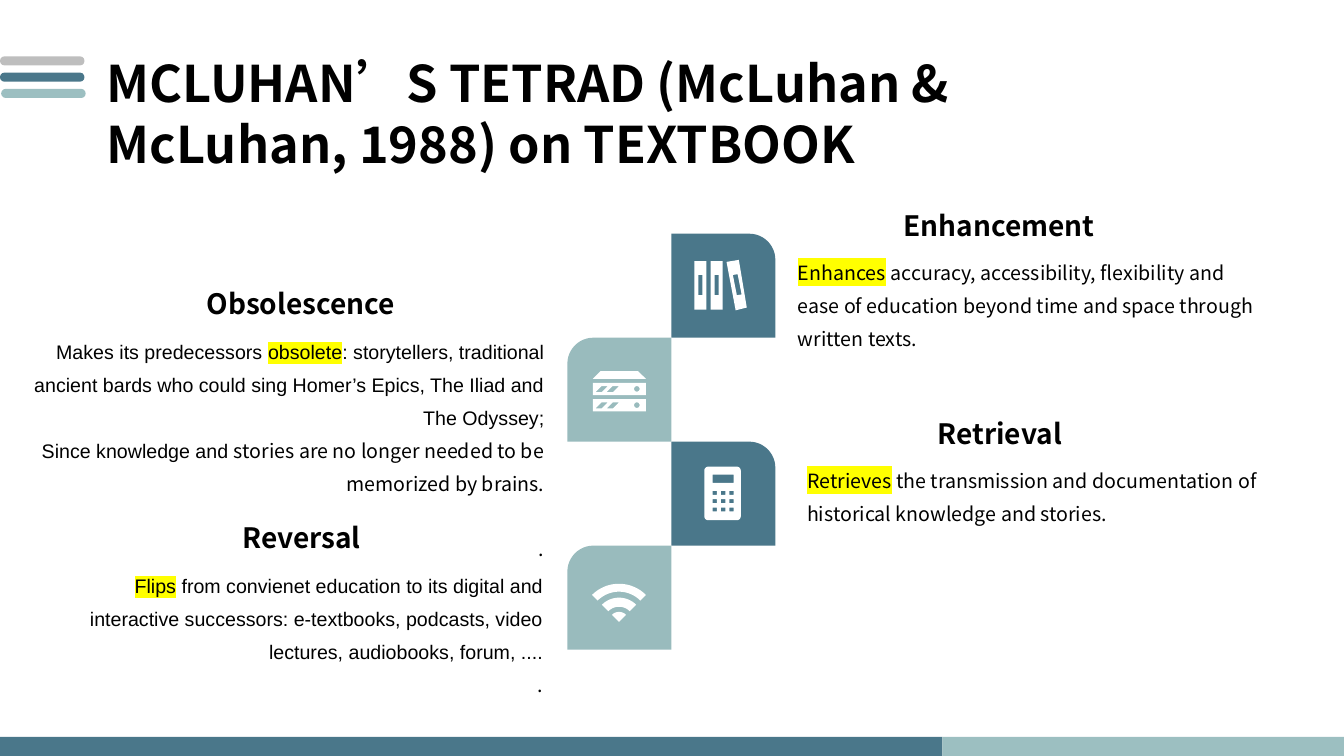
"""Build the slide on McLuhan's tetrad applied to the textbook."""
from math import cos, pi, sin

from lxml.etree import SubElement
from pptx import Presentation
from pptx.dml.color import RGBColor
from pptx.enum.shapes import MSO_SHAPE as Preset
from pptx.enum.text import MSO_ANCHOR as Anchor, MSO_AUTO_SIZE as AutoSize, PP_ALIGN as Align
from pptx.oxml.ns import qn
from pptx.util import Cm, Pt

BLACK = RGBColor(0x00, 0x00, 0x00)
WHITE = RGBColor(0xFF, 0xFF, 0xFF)
TEAL = RGBColor(0x4A, 0x77, 0x8A)
MINT = RGBColor(0x9C, 0xBF, 0xC1)
SAGE = RGBColor(0x99, 0xBB, 0xBD)
GREY = RGBColor(0xBE, 0xBE, 0xBE)
HIGHLIGHT = "FFFF00"
NOTO = "Noto Sans CJK SC"
ARIAL = "Arial"

TILE = 2.62
TILE_LEFT, TILE_TOP = 14.3, 5.89
BLANK_LINE = Pt(23.5)

HEADINGS = [
    ("Obsolescence", 4.85, 7.09, 5.46),
    ("Reversal", 5.72, 12.98, 3.76),
    ("Enhancement", 22.45, 5.13, 5.46),
    ("Retrieval", 23.32, 10.36, 3.76),
]

BODIES = [
    ((19.86, 6.22, 12.22, 3.61), Align.LEFT, [
        [("Enhances", NOTO, True),
         (" accuracy, accessibility, flexibility and ease of education beyond time"
          " and space through written texts.", NOTO, False)],
    ]),
    ((20.09, 11.46, 12.22, 1.93), Align.LEFT, [
        [("Retrieves", NOTO, True),
         (" the transmission and documentation of historical knowledge and stories.",
          NOTO, False)],
    ]),
    ((0, 8.2, 13.97, 6.12), Align.RIGHT, [
        [("Makes its predecessors ", ARIAL, False),
         ("obsolete", ARIAL, True),
         (": storytellers, traditional ancient bards who could sing Homer’s Epics,"
          " The Iliad and The Odyssey;", ARIAL, False)],
        [("Since knowledge and ", ARIAL, False),
         ("stories are no longer needed to be memorized by brains.", NOTO, False)],
        [(".", NOTO, False)],
    ]),
    ((1.19, 14.1, 12.75, 3.61), Align.RIGHT, [
        [("Flips", ARIAL, True),
         (" from convienet education to its digital and interactive successors:"
          " e-textbooks, podcasts, video lectures, audiobooks, forum, ....", ARIAL, False)],
        [(".", NOTO, False)],
    ]),
]


def add_block(slide, preset, box, color):
    """Add a plain filled preset shape."""
    shape = slide.shapes.add_shape(preset, *map(Cm, box))
    shape.shadow.inherit = False
    shape.fill.solid()
    shape.fill.fore_color.rgb = color
    shape.line.fill.background()
    return shape


def add_run(paragraph, text, font_name, size, bold=False, highlighted=False):
    """Add one formatted run to a paragraph."""
    run = paragraph.add_run()
    run.text = text
    run.font.size = Pt(size)
    run.font.bold = bold
    run.font.color.rgb = BLACK
    if highlighted:
        highlight = SubElement(run.font.fill._xPr, qn("a:highlight"))
        SubElement(highlight, qn("a:srgbClr"), val=HIGHLIGHT)
    run.font.name = font_name


def add_text_box(slide, box):
    """Add an empty wrapping text box and return its text frame."""
    frame = slide.shapes.add_textbox(*map(Cm, box)).text_frame
    frame.word_wrap = True
    return frame


def add_heading(slide, text, left, top, width):
    """Add a bold centred heading."""
    paragraph = add_text_box(slide, (left, top, width, 1.12)).paragraphs[0]
    paragraph.alignment = Align.CENTER
    add_run(paragraph, text, NOTO, 20, bold=True)


def add_body(slide, box, alignment, paragraphs):
    """Add a body text box from lists of runs."""
    frame = add_text_box(slide, box)
    for index, runs in enumerate(paragraphs):
        paragraph = frame.add_paragraph() if index else frame.paragraphs[0]
        paragraph.alignment = alignment
        paragraph.line_spacing = 1.4
        if index == 2:
            paragraph.space_before = BLANK_LINE
        for text, font_name, highlighted in runs:
            add_run(paragraph, text, font_name, 14, highlighted=highlighted)


def add_outline(slide, *contours):
    """Add a white freeform; contours after the first are holes."""
    outlines = [[(Cm(x), Cm(y)) for x, y in contour] for contour in contours]
    builder = slide.shapes.build_freeform(*outlines[0][0])
    builder.add_line_segments(outlines[0][1:])
    for hole in outlines[1:]:
        builder.move_to(*hole[0])
        builder.add_line_segments(hole[1:])
    shape = builder.convert_to_shape()
    shape.shadow.inherit = False
    shape.fill.solid()
    shape.fill.fore_color.rgb = WHITE
    shape.line.fill.background()


def box_points(left, top, width, height):
    """Return the corners of a rectangle."""
    right, bottom = left + width, top + height
    return [(left, top), (right, top), (right, bottom), (left, bottom)]


def arc_points(x, y, radius, start, end, steps=24):
    """Return points along an arc, with angles in degrees."""
    angles = [(start + (end - start) * i / steps) * pi / 180 for i in range(steps + 1)]
    return [(x + radius * cos(a), y + radius * sin(a)) for a in angles]


def add_books(slide):
    """Draw two upright books and a leaning one."""
    for left in (17.5, 17.91):
        add_outline(slide, box_points(left, 6.58, 0.3, 1.22),
                    box_points(left + 0.1, 6.93, 0.1, 0.51))
    add_outline(slide, [(18.62, 6.55), (18.31, 6.6), (18.54, 7.82), (18.82, 7.75)],
                [(18.47, 6.93), (18.59, 6.91), (18.69, 7.42), (18.57, 7.44)])


def add_server(slide):
    """Draw a lid and two server units with slots and a lamp."""
    add_outline(slide, [(14.94, 9.55), (15.14, 9.35), (16.08, 9.35), (16.28, 9.55)])
    for top in (9.65, 10.06):
        slots = [[(x, top + 0.08), (x + 0.16, top + 0.08),
                  (x + 0.01, top + 0.23), (x - 0.15, top + 0.23)] for x in (15.16, 15.44)]
        lamp = arc_points(16.05, top + 0.15, 0.07, 0, 360)
        add_outline(slide, box_points(14.94, top, 1.34, 0.31), lamp, *slots)


def add_calculator(slide):
    """Draw a rounded calculator with a display and nine keys."""
    corners = [(18.57, 13.01), (17.85, 13.01), (17.85, 11.86), (18.57, 11.86)]
    body = [point for i, (x, y) in enumerate(corners)
            for point in arc_points(x, y, 0.1, 90 * i, 90 * i + 90, 6)]
    keys = [box_points(17.96 + 0.21 * column, 12.37 + 0.21 * row, 0.11, 0.1)
            for row in range(3) for column in range(3)]
    add_outline(slide, body, box_points(17.96, 11.96, 0.53, 0.21), *keys)


def add_wireless(slide):
    """Draw three signal bands around one point."""
    for inner, outer in ((0, 0.25), (0.38, 0.61), (0.76, 0.96)):
        add_outline(slide, arc_points(15.6, 15.67, outer, 225, 315)
                    + arc_points(15.6, 15.67, inner, 315, 225))


def format_title(slide):
    """Place and fill the title placeholder."""
    title = slide.shapes.title
    title.left, title.top, title.width, title.height = map(Cm, (2.44, 1.19, 27.66, 3.33))
    frame = title.text_frame
    frame.word_wrap = True
    frame.auto_size = AutoSize.NONE
    frame.vertical_anchor = Anchor.TOP
    paragraph = frame.paragraphs[0]
    paragraph.alignment = Align.LEFT
    paragraph.line_spacing = 1.0
    add_run(paragraph, "MCLUHAN’S TETRAD (McLuhan & McLuhan, 1988) on TEXTBOOK",
            NOTO, 36, bold=True)


def main():
    """Assemble and save the slide."""
    presentation = Presentation()
    presentation.slide_width, presentation.slide_height = Cm(33.87), Cm(19.05)
    slide = presentation.slides.add_slide(presentation.slide_layouts[5])
    format_title(slide)
    for index, (left, color) in enumerate([(0, GREY), (0, TEAL), (0.03, MINT)]):
        stripe = add_block(slide, Preset.ROUNDED_RECTANGLE,
                           (left, 1.42 + 0.41 * index, 2.13, 0.23), color)
        stripe.adjustments[0] = 0.5
    add_block(slide, Preset.RECTANGLE, (0, 18.57, 23.75, 0.48), TEAL)
    add_block(slide, Preset.RECTANGLE, (23.75, 18.57, 10.12, 0.48), MINT)
    for row in range(4):
        mirrored = row % 2 == 1
        left = TILE_LEFT if mirrored else TILE_LEFT + TILE
        tile = add_block(slide, Preset.ROUND_1_RECTANGLE,
                         (left, TILE_TOP + TILE * row, TILE, TILE), SAGE if mirrored else TEAL)
        tile.adjustments[0] = 0.25
        if mirrored:
            tile.element.spPr.xfrm.set("flipH", "1")
    for body in BODIES:
        add_body(slide, *body)
    for heading in HEADINGS:
        add_heading(slide, *heading)
    for add_icon in (add_books, add_server, add_calculator, add_wireless):
        add_icon(slide)
    presentation.save("out.pptx")


if __name__ == "__main__":
    main()
